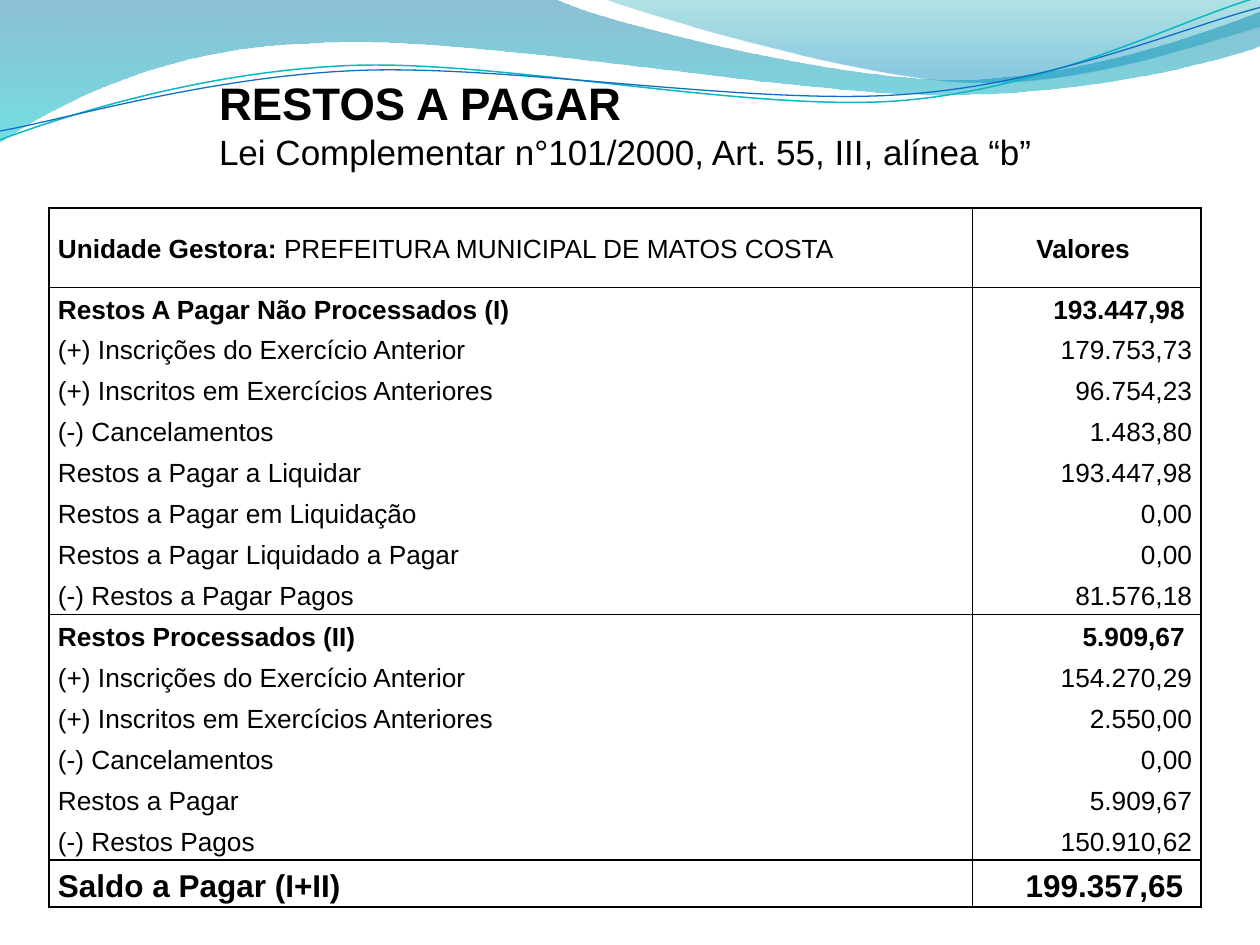
from math import cos, radians, sin

from lxml import etree
from pptx import Presentation
from pptx.dml.color import RGBColor
from pptx.enum.text import MSO_ANCHOR, MSO_AUTO_SIZE, PP_ALIGN
from pptx.oxml.ns import qn
from pptx.util import Inches, Pt

LEFT, CENTER, RIGHT = PP_ALIGN.LEFT, PP_ALIGN.CENTER, PP_ALIGN.RIGHT
MIDDLE = MSO_ANCHOR.MIDDLE
FIT_SHAPE = MSO_AUTO_SIZE.SHAPE_TO_FIT_TEXT
FONT = "Arial"
BLACK = "000000"
TILT = -2.7

# Each wave is a list of segments: 2 numbers are a line, 6 a Bezier curve
BACK_WAVE = [
    (0, 0), (4.4, -0.01), (4.76, 0.17, 6.64, 0.63, 7.58, 0.63),
    (8.53, 0.63, 9.58, 0.26, 10, 0.09), (10.01, 0.36),
    (9.83, 0.44, 8.7, 0.76, 7.46, 0.75), (6.22, 0.75, 3.82, 0.28, 2.57, 0.34),
    (1.29, 0.36, 0.46, 0.83, -0.01, 1.13), (0, 0),
]
FRONT_WAVE = [
    (4.79, -0.01), (5.09, 0.11, 6.82, 0.62, 7.69, 0.65),
    (8.56, 0.69, 9.61, 0.32, 10, 0.21), (10, 0), (4.79, -0.01),
]
TEAL_LINE = [
    (0, 1.11), (0.48, 0.93, 1.58, 0.57, 2.77, 0.52),
    (3.95, 0.47, 5.93, 0.89, 7.13, 0.8), (8.33, 0.71, 9.38, 0.15, 9.98, -0.02),
]
BLUE_LINE = [
    (0, 1.04), (0.47, 0.96, 1.64, 0.61, 2.83, 0.56),
    (4.03, 0.51, 5.97, 0.84, 7.17, 0.75), (8.36, 0.67, 9.41, 0.21, 10, 0.06),
]

HEADER = ("Unidade Gestora:", " PREFEITURA MUNICIPAL DE MATOS COSTA", "Valores ")
SECTIONS = [
    [
        ("Restos A Pagar Não Processados (I)", "193.447,98 "),
        ("(+) Inscrições do Exercício Anterior", "179.753,73"),
        ("(+) Inscritos em Exercícios Anteriores", "96.754,23"),
        ("(-) Cancelamentos", "1.483,80"),
        ("Restos a Pagar a Liquidar", "193.447,98"),
        ("Restos a Pagar em Liquidação", "0,00"),
        ("Restos a Pagar Liquidado a Pagar", "0,00"),
        ("(-) Restos a Pagar Pagos", "81.576,18"),
    ],
    [
        ("Restos Processados (II)", "5.909,67 "),
        ("(+) Inscrições do Exercício Anterior", "154.270,29"),
        ("(+) Inscritos em Exercícios Anteriores", "2.550,00"),
        ("(-) Cancelamentos", "0,00"),
        ("Restos a Pagar", "5.909,67"),
        ("(-) Restos Pagos", "150.910,62"),
    ],
]
TOTAL = ("Saldo a Pagar (I+II)", "199.357,65 ")


def color(value):
    return RGBColor.from_string(value)


def add_span(para, text, size, bold):
    span = para.add_run()
    span.text = text
    span.font.name, span.font.size, span.font.bold = FONT, Pt(size), bold
    span.font.color.rgb = color(BLACK)


def turn(segment, center, angle):
    """Rotate every point of a segment about the center."""
    (cx, cy), c, s = center, cos(radians(angle)), sin(radians(angle))
    turned = []
    for x, y in zip(segment[::2], segment[1::2]):
        turned += [cx + (x - cx) * c - (y - cy) * s, cy + (x - cx) * s + (y - cy) * c]
    return turned


def add_outline(page, left, top, segments, close):
    points = [(Inches(left + x), Inches(top + y))
              for segment in segments for x, y in zip(segment[::2], segment[1::2])]
    builder = page.shapes.build_freeform(*points[0])
    builder.add_line_segments(points[1:], close=close)
    shape = builder.convert_to_shape()
    shape.shadow.inherit = False
    # Join the three points of each curve into one Bezier command
    steps = iter(list(shape._element.iter(qn("a:lnTo"))))
    for segment in segments[1:]:
        step = next(steps)
        if len(segment) == 6:
            step.addprevious(curve := etree.Element(qn("a:cubicBezTo")))
            for part in (step, next(steps), next(steps)):
                curve.append(part[0])
                part.getparent().remove(part)
    return shape


def add_wave(page, left, top, segments, stops):
    wave = add_outline(page, left, top, segments, True)
    wave.line.fill.background()
    wave.fill.gradient()
    wave.fill.gradient_angle = 270
    for stop, (position, tint, _) in zip(wave.fill.gradient_stops, stops):
        stop.position = position
        stop.color.rgb = color(tint)
    tints = wave._element.spPr.iter(qn("a:srgbClr"))
    for tint, (_, _, opacity) in zip(tints, stops):
        etree.SubElement(tint, qn("a:alpha"), val=str(opacity * 1000))


def add_wave_line(page, left, top, segments, center, tint, width):
    level = [turn(segment, center, -TILT) for segment in segments]
    line = add_outline(page, left, top, level, False)
    line.rotation = TILT
    line.fill.background()
    line.line.color.rgb = color(tint)
    line.line.width = Pt(width)


def add_banner(page, left, top):
    add_wave(page, left, top, BACK_WAVE, [(0, "0074A1", 45), (1, "00C6CF", 55)])
    add_wave(page, left, top, FRONT_WAVE, [(0, "00A1A9", 30), (0.8, "008BBF", 45)])
    add_wave_line(page, left, top, TEAL_LINE, (4.99, 0.57), "0AB8BF", 0.85)
    add_wave_line(page, left, top, BLUE_LINE, (5, 0.59), "0F6FC6", 0.75)


def add_heading(page, left, top, width, height):
    box = page.shapes.add_textbox(Inches(left), Inches(top), Inches(width), Inches(height))
    frame = box.text_frame
    frame.word_wrap = True
    frame.auto_size = FIT_SHAPE
    add_span(frame.paragraphs[0], "RESTOS A PAGAR", 26, True)
    add_span(frame.add_paragraph(),
             "Lei Complementar n°101/2000, Art. 55, III, alínea “b”", 20, False)


def set_borders(cell, sides):
    properties = cell._tc.get_or_add_tcPr()
    for side in "LRTB":
        line = etree.SubElement(properties, qn("a:ln" + side), w=str(Pt(1)))
        if side in sides:
            fill = etree.SubElement(line, qn("a:solidFill"))
            etree.SubElement(fill, qn("a:srgbClr"), val=BLACK)
        else:
            etree.SubElement(line, qn("a:noFill"))


def fill_cell(cell, spans, size, align, sides):
    cell.vertical_anchor = MIDDLE
    cell.margin_left = cell.margin_right = Inches(0.07)
    cell.margin_top = cell.margin_bottom = Inches(0.01)
    set_borders(cell, sides)
    cell.fill.background()
    para = cell.text_frame.paragraphs[0]
    para.alignment, para.line_spacing = align, 1.15
    for text, bold in spans:
        add_span(para, text, size, bold)


def add_balance_table(page, left, top, width, height):
    label, unit, values = HEADER
    # Each row: label spans, value spans, text size, value alignment, borders
    rows = [([(label, True), (unit, False)], [(values, True)], 15, CENTER, "LRTB")]
    for section in SECTIONS:
        for index, (name, amount) in enumerate(section):
            first, last = index == 0, index == len(section) - 1
            sides = "LR" + "T" * first + "B" * last
            rows.append(([(name, first)], [(amount, first)], 15, RIGHT, sides))
    rows.append(([(TOTAL[0], True)], [(TOTAL[1], True)], 18, RIGHT, "LRTB"))

    table = page.shapes.add_table(len(rows), 2, Inches(left), Inches(top),
                                  Inches(width), Inches(height)).table
    table.first_row = table.horz_banding = False
    value_width, header_height, total_height = 1.81, 0.63, 0.37
    table.columns[0].width = Inches(width - value_width)
    table.columns[1].width = Inches(value_width)
    row_height = (height - header_height - total_height) / (len(rows) - 2)
    heights = [header_height] + [row_height] * (len(rows) - 2) + [total_height]
    for index, (names, amounts, size, align, sides) in enumerate(rows):
        table.rows[index].height = Inches(heights[index])
        fill_cell(table.cell(index, 0), names, size, LEFT, sides)
        fill_cell(table.cell(index, 1), amounts, size, align, sides)


def main():
    deck = Presentation()
    deck.slide_width, deck.slide_height = Inches(10), Inches(7.5)
    page = deck.slides.add_slide(deck.slide_layouts[6])
    add_banner(page, 0, 0)
    add_heading(page, 1.64, 0.55, 6.8, 0.88)
    add_balance_table(page, 0.39, 1.65, 9.14, 5.55)
    deck.save("out.pptx")


if __name__ == "__main__":
    main()
